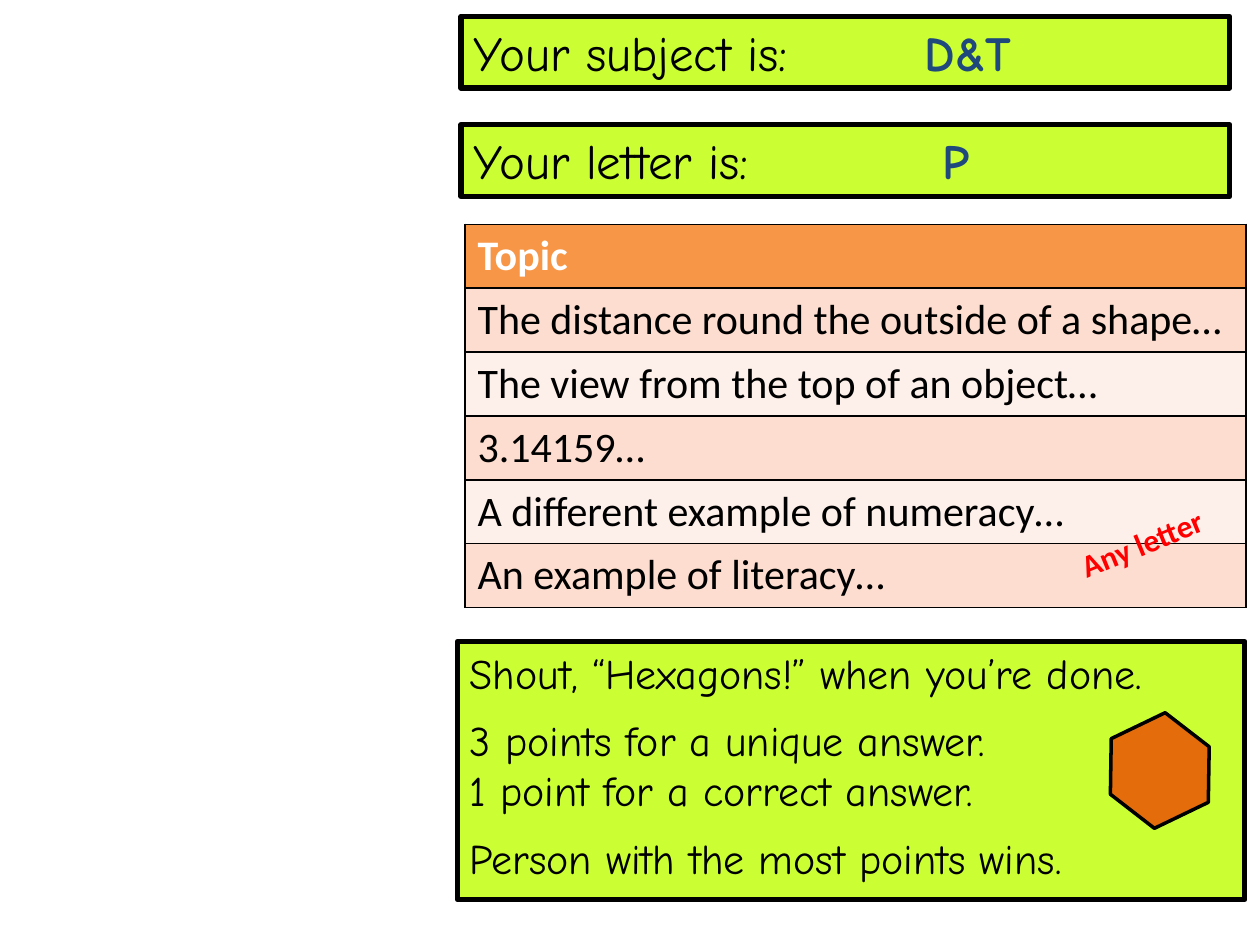
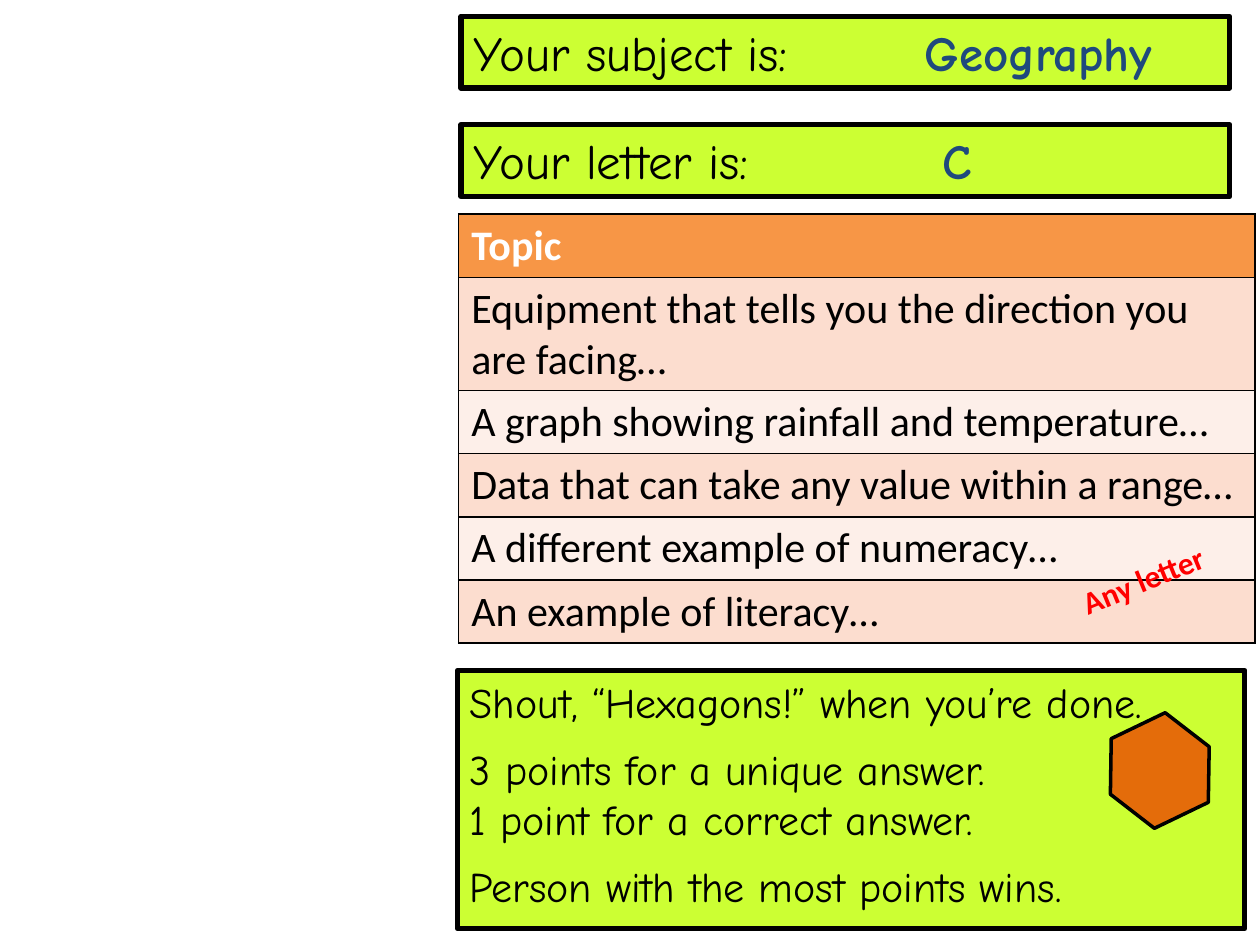
"""Build two subject quiz cards with a topic table and the scoring rules."""
from pptx import Presentation
from pptx.dml.color import RGBColor
from pptx.enum.shapes import MSO_SHAPE as Shape
from pptx.enum.text import MSO_ANCHOR as Anchor, MSO_AUTO_SIZE as AutoSize, PP_ALIGN as Align
from pptx.oxml import parse_xml
from pptx.oxml.ns import nsdecls
from pptx.util import Inches, Pt

BLACK = RGBColor(0x00, 0x00, 0x00)
WHITE = RGBColor(0xFF, 0xFF, 0xFF)
LIME = RGBColor(0xCC, 0xFF, 0x33)
NAVY = RGBColor(0x1F, 0x49, 0x7D)
RED = RGBColor(0xFF, 0x00, 0x00)
RUST = RGBColor(0xE4, 0x6C, 0x0A)
HEADER = RGBColor(0xF7, 0x96, 0x46)
BANDS = (RGBColor(0xFD, 0xEF, 0xE9), RGBColor(0xFC, 0xDD, 0xCF))

LABEL = dict(name="Comic Neue", size=Pt(28))
ANSWER = dict(LABEL, bold=True)
RULE = dict(name="Comic Neue", size=Pt(24))
TOPIC = dict(name="Calibri", size=Pt(24), bold=False)
TOPIC_HEAD = dict(TOPIC, bold=True)
NOTE = dict(name="Calibri", size=Pt(18), bold=True)

SHARED_TOPICS = ["A different example of numeracy…", "An example of literacy…"]
RULES = [
    ("Shout, “Hexagons!” when you’re done.", 0),
    ("3 points for a unique answer.", 9.5),
    ("1 point for a correct answer.", 0),
    ("Person with the most points wins.", 9.5),
]
CARDS = [
    dict(
        subject="D&T",
        letter="P",
        topics=["The distance round the outside of a shape…",
                "The view from the top of an object…",
                "3.14159…"],
        table=(3.69, 1.78, 6.2),
        rules_top=5.09,
        note=(8.34, 4.11),
    ),
    dict(
        subject="Geography",
        letter="C",
        topics=["Equipment that tells you the direction you are facing…",
                "A graph showing rainfall and temperature…",
                "Data that can take any value within a range…"],
        table=(3.64, 1.7, 6.32),
        rules_top=5.32,
        note=(8.35, 4.4),
    ),
]
ROW_HEIGHT = 0.5
BAND_HEIGHT = 0.57
SUBJECT_TOP, LETTER_TOP = 0.13, 0.99


def write(para, text, style, color):
    span = para.add_run()
    span.text = text
    for key, value in style.items():
        setattr(span.font, key, value)
    span.font.color.rgb = color


def add_panel(page, kind, place, fill, line_width):
    panel = page.shapes.add_shape(kind, *map(Inches, place))
    panel.shadow.inherit = False
    panel.fill.solid()
    panel.fill.fore_color.rgb = fill
    panel.line.color.rgb = BLACK
    panel.line.width = Pt(line_width)
    return panel


def fill_box(box, lines, style, color, align=Align.LEFT):
    frame = box.text_frame
    frame.word_wrap = True
    frame.auto_size = AutoSize.SHAPE_TO_FIT_TEXT
    frame.vertical_anchor = Anchor.TOP
    for index, (text, gap) in enumerate(lines):
        para = frame.add_paragraph() if index else frame.paragraphs[0]
        para.alignment = align
        if gap:
            para.space_before = Pt(gap)
        write(para, text, style, color)


def add_text(page, place, text, style, color, align=Align.LEFT):
    box = page.shapes.add_textbox(*map(Inches, place))
    fill_box(box, [(text, 0)], style, color, align)
    return box


def add_band(page, top, label):
    band = add_panel(page, Shape.RECTANGLE, (3.66, top, 6.1, BAND_HEIGHT), LIME, 3)
    fill_box(band, [(label, 0)], LABEL, BLACK)


def outline(cell):
    properties = cell._tc.get_or_add_tcPr()
    for index, side in enumerate("LRTB"):
        properties.insert(index, parse_xml(
            f'<a:ln{side} {nsdecls("a")} w="{Pt(1)}"><a:solidFill>'
            f'<a:srgbClr val="{BLACK}"/></a:solidFill></a:ln{side}>'))


def add_topics(page, place, topics):
    left, top, width = place
    rows = ["Topic", *topics, *SHARED_TOPICS]
    height = ROW_HEIGHT * len(rows)
    table = page.shapes.add_table(len(rows), 1, *map(Inches, (left, top, width, height))).table
    for index, text in enumerate(rows):
        cell = table.cell(index, 0)
        cell.fill.solid()
        cell.fill.fore_color.rgb = BANDS[index % 2] if index else HEADER
        style, color = (TOPIC, BLACK) if index else (TOPIC_HEAD, WHITE)
        write(cell.text_frame.paragraphs[0], text, style, color)
        outline(cell)


def add_card(deck, card):
    page = deck.slides.add_slide(deck.slide_layouts[6])
    add_topics(page, card["table"], card["topics"])
    add_band(page, SUBJECT_TOP, "Your subject is:")
    add_band(page, LETTER_TOP, "Your letter is:")
    rules = add_panel(page, Shape.RECTANGLE, (3.63, card["rules_top"], 6.25, 2.05), LIME, 3)
    fill_box(rules, RULES, RULE, BLACK)
    hexagon = add_panel(page, Shape.HEXAGON, (8.77, 5.72, 0.87, 0.79), RUST, 2)
    hexagon.rotation = 334.3
    add_text(page, (7.24, SUBJECT_TOP, 2.52, BAND_HEIGHT), card["subject"], ANSWER, NAVY)
    add_text(page, (7.38, LETTER_TOP, 0.63, BAND_HEIGHT), card["letter"], ANSWER, NAVY)
    note = add_text(page, (*card["note"], 1.44, 0.4), "Any letter", NOTE, RED, Align.CENTER)
    note.rotation = 337.7


def main():
    deck = Presentation()
    deck.slide_width, deck.slide_height = Inches(10), Inches(7.5)
    for card in CARDS:
        add_card(deck, card)
    deck.save("out.pptx")


if __name__ == "__main__":
    main()
